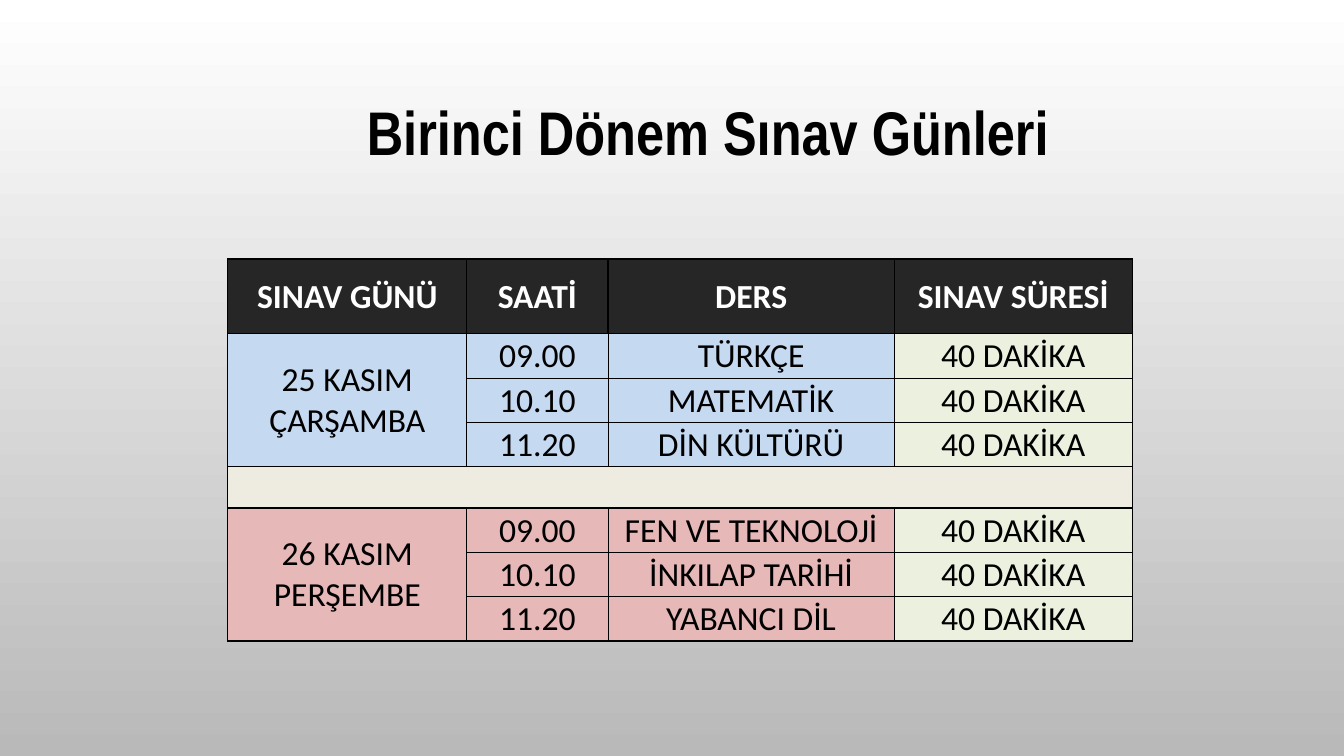
from lxml.etree import SubElement
from pptx import Presentation
from pptx.dml.color import RGBColor
from pptx.enum.text import MSO_ANCHOR as Anchor, PP_ALIGN as Align
from pptx.oxml.ns import qn
from pptx.util import Inches, Pt

COLORS = {
    "black": "000000", "white": "FFFFFF", "gray": "B9B9B9", "header": "262626",
    "blue": "C5D9F1", "pink": "E6B8B7", "green": "EBF1DE", "cream": "EEECE1",
}
TITLE_FONT = {"name": "Arial Narrow", "size": Pt(44), "bold": True}
HEADER_FONT = {"name": "Calibri", "size": Pt(24), "bold": True}
BODY_FONT = {"name": "Calibri", "size": Pt(24), "bold": False}
CELL_FORMAT = {
    "margin_left": Inches(0.01), "margin_right": Inches(0.01),
    "margin_top": Inches(0.01), "margin_bottom": 0,
    "vertical_anchor": Anchor.MIDDLE,
}
TITLE_FORMAT = {
    "margin_left": Inches(0.05), "margin_right": Inches(0.05),
    "margin_top": Inches(0.05), "margin_bottom": Inches(0.05),
    "vertical_anchor": Anchor.MIDDLE, "word_wrap": True,
}
HEADERS = ["SINAV GÜNÜ", "SAATİ", "DERS", "SINAV SÜRESİ"]
HOURS = ["09.00", "10.10", "11.20"]
DURATION = "40 DAKİKA"
EXAM_DAYS = [
    ("25 KASIM ÇARŞAMBA", "blue", ["TÜRKÇE", "MATEMATİK", "DİN KÜLTÜRÜ"]),
    ("26 KASIM PERŞEMBE", "pink", ["FEN VE TEKNOLOJİ", "İNKILAP TARİHİ", "YABANCI DİL"]),
]
COLUMN_WIDTHS = [2.37, 1.4, 2.84, 2.36]
DAY_HEIGHTS = [0.44] * len(HOURS)
ROW_HEIGHTS = [0.74, *DAY_HEIGHTS, 0.41, *DAY_HEIGHTS]
GAP_ROW = 4


def rgb(name):
    """Return the named colour."""
    return RGBColor.from_string(COLORS[name])


def apply(target, values):
    """Set every format value on the target."""
    for key, value in values.items():
        setattr(target, key, value)


def write(frame, text, font, color):
    """Write one centred line of formatted text."""
    para = frame.paragraphs[0]
    para.alignment = Align.CENTER
    span = para.add_run()
    span.text = text
    apply(span.font, font)
    span.font.color.rgb = rgb(color)


def style_cell(cell, fill, thin_sides=""):
    """Give a cell its margins, borders and fill."""
    apply(cell, CELL_FORMAT)
    properties = cell._tc.get_or_add_tcPr()
    for side in "LRTB":
        width = Pt(0.5) if side in thin_sides else Pt(1)
        line = SubElement(properties, qn(f"a:ln{side}"), w=str(int(width)))
        paint = SubElement(line, qn("a:solidFill"))
        SubElement(paint, qn("a:srgbClr"), val=COLORS["black"])
    cell.fill.solid()
    cell.fill.fore_color.rgb = rgb(fill)


def add_background(page):
    """Fill the page with a gradient from white down to gray."""
    fill = page.background.fill
    fill.gradient()
    fill.gradient_angle = 270
    for stop, position, name in zip(fill.gradient_stops, (0, 1), ("white", "gray")):
        stop.position = position
        stop.color.rgb = rgb(name)


def add_title(page, left, top, width, height):
    """Place the title in an unfilled outline over the given box."""
    left, top, width, height = map(Inches, (left, top, width, height))
    right, bottom = left + width, top + height
    outline = page.shapes.build_freeform(left, top)
    outline.add_line_segments([(right, top), (right, bottom), (left, bottom)], close=True)
    title = outline.convert_to_shape()
    title.shadow.inherit = False
    title.fill.background()
    title.line.fill.background()
    apply(title.text_frame, TITLE_FORMAT)
    write(title.text_frame, "Birinci Dönem Sınav Günleri", TITLE_FONT, "black")


def fill_day(table, first_row, day, color, lessons):
    """Fill the rows of one exam day."""
    last = len(lessons) - 1
    for index, (hour, lesson) in enumerate(zip(HOURS, lessons)):
        row = first_row + index
        inner = ("T" if index > 0 else "") + ("B" if index < last else "")
        style_cell(table.cell(row, 0), color)
        columns = [(hour, color, "R"), (lesson, color, "L"), (DURATION, "green", "")]
        for column, (text, fill, side) in enumerate(columns, 1):
            cell = table.cell(row, column)
            style_cell(cell, fill, inner + side)
            write(cell.text_frame, text, BODY_FONT, "black")
    day_cell = table.cell(first_row, 0)
    day_cell.merge(table.cell(first_row + last, 0))
    write(day_cell.text_frame, day, BODY_FONT, "black")


def add_schedule(page, left, top, width, height):
    """Place the exam schedule table in the given box."""
    table = page.shapes.add_table(
        len(ROW_HEIGHTS), len(COLUMN_WIDTHS), *map(Inches, (left, top, width, height))
    ).table
    apply(table, {"first_row": False, "horz_banding": False})
    for column, size in zip(table.columns, COLUMN_WIDTHS):
        column.width = Inches(size)
    for row, size in zip(table.rows, ROW_HEIGHTS):
        row.height = Inches(size)
    for column, text in enumerate(HEADERS):
        style_cell(table.cell(0, column), "header")
        write(table.cell(0, column).text_frame, text, HEADER_FONT, "white")
        style_cell(table.cell(GAP_ROW, column), "cream")
    table.cell(GAP_ROW, 0).merge(table.cell(GAP_ROW, len(HEADERS) - 1))
    for first_row, exam_day in zip((1, GAP_ROW + 1), EXAM_DAYS):
        fill_day(table, first_row, *exam_day)


def main():
    """Build the exam days slide."""
    deck = Presentation()
    deck.slide_width, deck.slide_height = Inches(13.33), Inches(7.5)
    page = deck.slides.add_slide(deck.slide_layouts[6])
    add_background(page)
    add_title(page, 3.25, 0.47, 7.55, 1.65)
    add_schedule(page, 2.26, 2.57, sum(COLUMN_WIDTHS), sum(ROW_HEIGHTS))
    deck.save("out.pptx")


if __name__ == "__main__":
    main()
